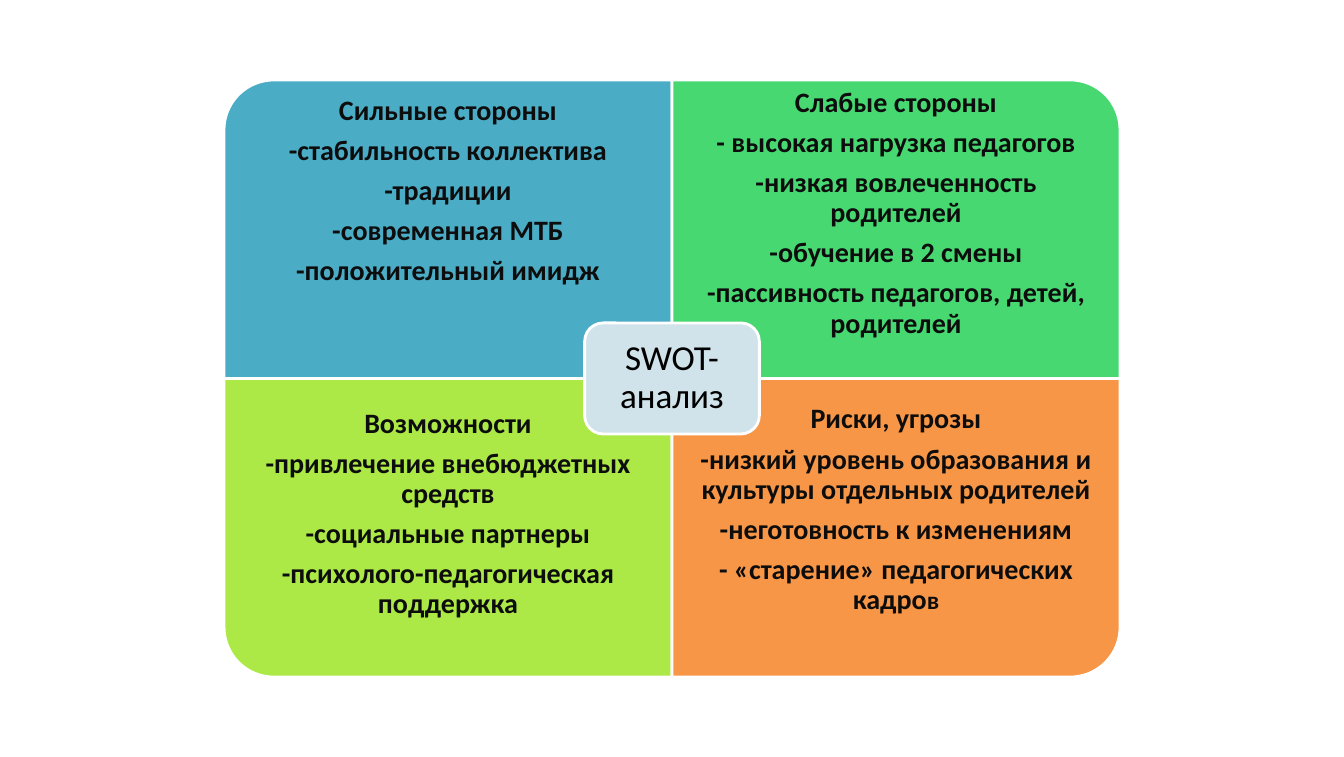
"""SWOT slide: four coloured quadrants around a central label."""
from pptx import Presentation
from pptx.dml.color import RGBColor
from pptx.enum.shapes import MSO_SHAPE
from pptx.enum.text import MSO_ANCHOR, PP_ALIGN
from pptx.util import Inches, Pt

CORNER = MSO_SHAPE.ROUND_1_RECTANGLE
ROUND = MSO_SHAPE.ROUNDED_RECTANGLE
TOP, MIDDLE = MSO_ANCHOR.TOP, MSO_ANCHOR.MIDDLE
CENTER = PP_ALIGN.CENTER

COLORS = {"strong": "4BACC6", "weak": "47D872", "chance": "ACE946",
          "risk": "F79646", "hub": "D0E3EA", "edge": "FFFFFF",
          "ink": "0D0D0D", "black": "000000"}
WIDE, HIGH = 13.31, 7.5
COL, ROW = WIDE / 3, WIDE * 2 / 9
LEFT, HEAD = WIDE / 2 - COL, HIGH / 2 - ROW
HUB_W, HUB_H = WIDE * 0.13, 1.1

QUADS = [
    ("strong", 0, 0, 270, 0.16, [
        "Сильные стороны", "-стабильность коллектива", "-традиции",
        "-современная МТБ", "-положительный имидж"]),
    ("weak", 1, 0, 0, 0.08, [
        "Слабые стороны", "- высокая нагрузка педагогов",
        "-низкая вовлеченность родителей", "-обучение в 2 смены",
        "-пассивность педагогов, детей, родителей"]),
    ("chance", 0, 1, 180, 0.3, [
        "Возможности", "-привлечение внебюджетных средств",
        "-социальные партнеры", "-психолого-педагогическая поддержка"]),
    ("risk", 1, 1, 90, 0.26, [
        "Риски, угрозы",
        "-низкий уровень образования и культуры отдельных родителей",
        "-неготовность к изменениям", "- «старение» педагогических кадро"]),
]


def add_block(kind, x, y, w, h, fill):
    block = slide.shapes.add_shape(
        kind, Inches(x - w / 2), Inches(y - h / 2), Inches(w), Inches(h))
    block.shadow.inherit = False
    block.fill.solid()
    block.fill.fore_color.rgb = RGBColor.from_string(COLORS[fill])
    block.line.color.rgb = RGBColor.from_string(COLORS["edge"])
    block.line.width = Pt(2)
    return block


def write(frame, lines, size, bold, color, anchor, side, top):
    frame.word_wrap = True
    frame.vertical_anchor = anchor
    frame.margin_left = frame.margin_right = Inches(side)
    frame.margin_top = frame.margin_bottom = Inches(top)
    frame.text = "\n".join(lines)
    for para in frame.paragraphs:
        para.alignment = CENTER
        para.line_spacing = 0.9
        para.space_after = Pt(size * 0.35)
        para.font.name = "Calibri"
        para.font.size = Pt(size)
        para.font.bold = bold
        para.font.color.rgb = RGBColor.from_string(COLORS[color])


prs = Presentation()
prs.slide_width, prs.slide_height = Inches(WIDE), Inches(HIGH)
slide = prs.slides.add_slide(prs.slide_layouts[6])

for name, col, row, turn, top, lines in QUADS:
    x, y = LEFT + col * COL, HEAD + row * ROW
    w, h = (ROW, COL) if turn % 180 else (COL, ROW)
    quad = add_block(CORNER, x + COL / 2, y + ROW / 2, w, h, name)
    quad.rotation = turn
    box = slide.shapes.add_textbox(
        Inches(x), Inches(y), Inches(COL), Inches(ROW))
    write(box.text_frame, lines, 20, True, "ink", TOP, 0.16, top)

tail = box.text_frame.paragraphs[-1].add_run()
tail.text = "в"
tail.font.size = Pt(18)

hub = add_block(ROUND, WIDE / 2, HIGH / 2, HUB_W, HUB_H, "hub")
write(hub.text_frame, ["SWOT-анализ"], 25, False, "black", MIDDLE, 0.15, 0.15)

prs.save("out.pptx")
